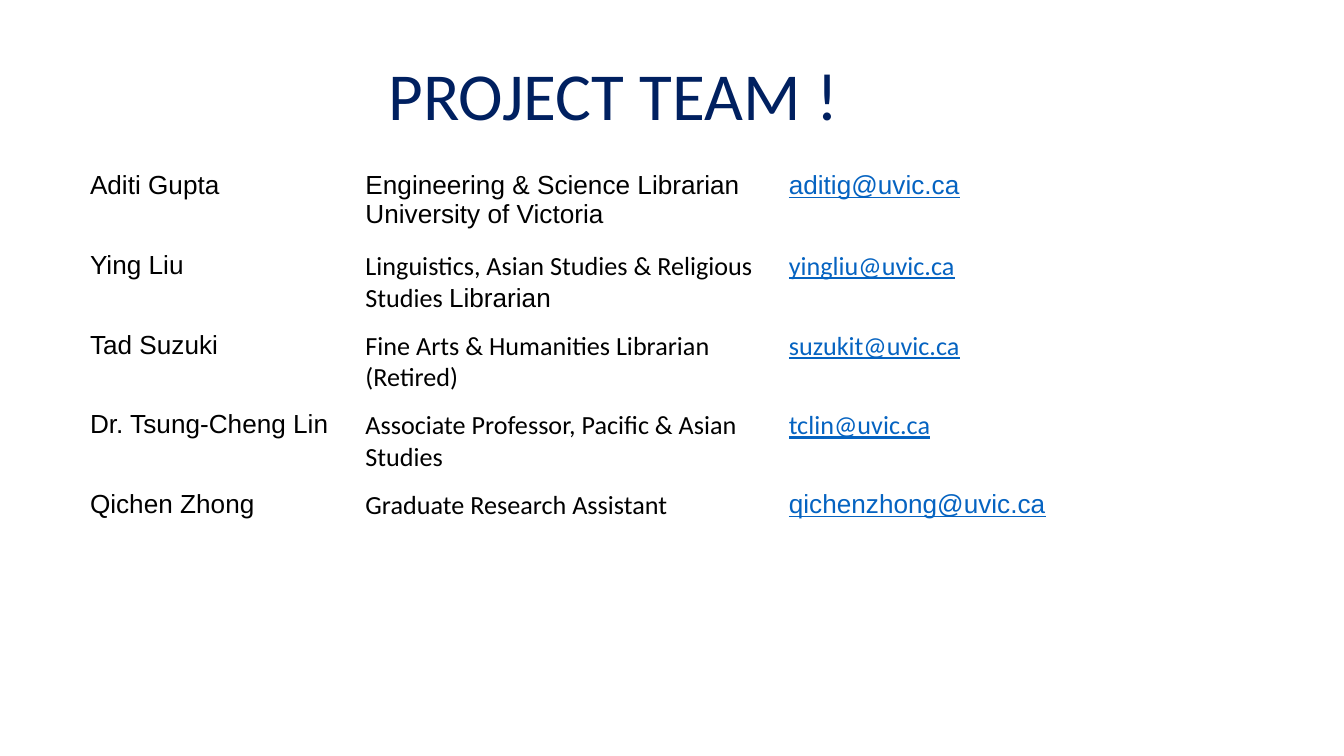
from dataclasses import dataclass
from typing import NamedTuple

from pptx import Presentation
from pptx.dml.color import RGBColor
from pptx.enum.text import MSO_ANCHOR as Anchor, PP_ALIGN as Align
from pptx.util import Inches, Pt


@dataclass(frozen=True)
class Theme:
    heading: RGBColor = RGBColor(0x00, 0x20, 0x60)
    body: RGBColor = RGBColor(0x00, 0x00, 0x00)
    email: RGBColor = RGBColor(0x05, 0x63, 0xC1)
    sans: str = "Arial"
    humanist: str = "Calibri"
    heading_size: int = 36
    body_size: int = 14


THEME = Theme()


class Span(NamedTuple):
    text: str
    font: str = THEME.sans


class Member(NamedTuple):
    name: str
    role: list[list[Span]]  # paragraphs of spans
    email: Span


TEAM = [
    Member("Aditi Gupta",
           [[Span("Engineering & Science Librarian")], [Span("University of Victoria")]],
           Span("aditig@uvic.ca")),
    Member("Ying Liu",
           [[Span("Linguistics, Asian Studies & Religious Studies ", THEME.humanist),
             Span("Librarian")]],
           Span("yingliu@uvic.ca", THEME.humanist)),
    Member("Tad Suzuki",
           [[Span("Fine Arts & Humanities Librarian (Retired)", THEME.humanist)]],
           Span("suzukit@uvic.ca", THEME.humanist)),
    Member("Dr. Tsung-Cheng Lin ",
           [[Span("Associate Professor, Pacific & Asian Studies", THEME.humanist)]],
           Span("tclin@uvic.ca", THEME.humanist)),
    Member("Qichen Zhong",
           [[Span("Graduate Research Assistant ", THEME.humanist)]],
           Span("qichenzhong@uvic.ca")),
]
COLUMN_WIDTHS = (2.05, 3.15, 3.81)
TABLE_HEIGHT = 2.97


def write(frame, paragraphs: list[list[Span]], *, size: int = THEME.body_size,
          color: RGBColor = THEME.body, underline: bool = False,
          align: Align = Align.LEFT, line_spacing: float = 1.0,
          space_after: float = 0) -> None:
    """Fill a text frame with paragraphs of formatted spans."""
    frame.word_wrap = True
    for index, spans in enumerate(paragraphs):
        paragraph = frame.add_paragraph() if index else frame.paragraphs[0]
        paragraph.alignment = align
        paragraph.line_spacing = line_spacing
        paragraph.space_after = Pt(space_after)
        for span in spans:
            run = paragraph.add_run()
            run.text = span.text
            run.font.name = span.font
            run.font.size = Pt(size)
            run.font.color.rgb = color
            run.font.underline = underline


def add_heading(slide, text: str) -> None:
    heading = slide.shapes.add_textbox(Inches(1.7), Inches(0.26), Inches(5.84), Inches(0.95))
    frame = heading.text_frame
    frame.vertical_anchor = Anchor.MIDDLE
    frame.margin_left = frame.margin_right = Inches(0.07)
    frame.margin_top = frame.margin_bottom = Inches(0.04)
    write(frame, [[Span(text, THEME.humanist)]], size=THEME.heading_size,
          color=THEME.heading, align=Align.CENTER, line_spacing=0.9, space_after=5)


def add_team_table(slide, team: list[Member]) -> None:
    table = slide.shapes.add_table(
        len(team), len(COLUMN_WIDTHS), Inches(0.61), Inches(1.27),
        Inches(sum(COLUMN_WIDTHS)), Inches(TABLE_HEIGHT)).table
    table.first_row = table.horz_banding = False
    for column, width in zip(table.columns, COLUMN_WIDTHS):
        column.width = Inches(width)

    for row, member in enumerate(team):
        table.rows[row].height = Inches(TABLE_HEIGHT / len(team))
        name, role, email = (table.cell(row, column) for column in range(3))
        for cell in (name, role, email):
            cell.fill.background()
            cell.margin_left = cell.margin_right = Inches(0.06)
            cell.margin_top = cell.margin_bottom = 0
        write(name.text_frame, [[Span(member.name)]])
        write(role.text_frame, member.role)
        write(email.text_frame, [[member.email]], color=THEME.email, underline=True)


def main() -> None:
    presentation = Presentation()
    presentation.slide_width = Inches(10)
    presentation.slide_height = Inches(10 * 9 / 16)
    slide = presentation.slides.add_slide(presentation.slide_layouts[6])

    # Heading
    add_heading(slide, "PROJECT TEAM ! ")
    # Names, roles and e-mail addresses
    add_team_table(slide, TEAM)

    presentation.save("out.pptx")


if __name__ == "__main__":
    main()
